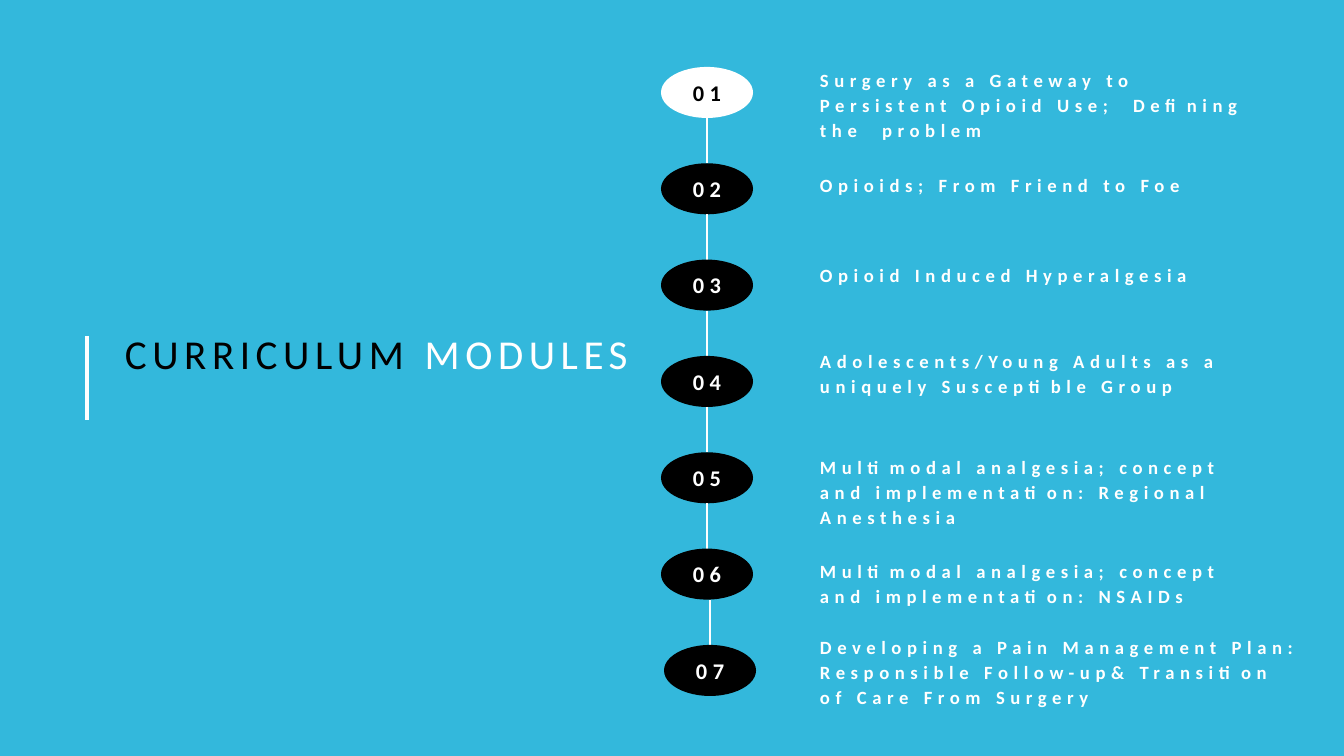
"""Build the curriculum modules slide with a numbered vertical timeline."""
import pptx
import pptx.dml.color
import pptx.enum.shapes
import pptx.enum.text
import pptx.util
from pptx.oxml.ns import qn
from lxml import etree

SLIDE_WIDTH, SLIDE_HEIGHT = 1344, 756
WHITE, BLACK, BLUE = "FFFFFF", "000000", "33B8DC"
TITLE = [("CURRICULUM ", BLACK), ("MODULES", WHITE)]
# label, top, width, height, badge shift, badge colour, number colour
MODULES = [
    ("Surgery as a Gateway to Persistent Opioid Use;  Defining the  problem", 67, 438, 73, 0, WHITE, BLACK),
    ("Opioids; From Friend to Foe", 172, 438, 23, 0, BLACK, WHITE),
    ("Opioid Induced Hyperalgesia", 262, 438, 23, 0, BLACK, WHITE),
    ("Adolescents/Young Adults as a uniquely Susceptible Group", 348, 462, 48, 0, BLACK, WHITE),
    ("Multimodal analgesia; concept and implementation: Regional Anesthesia", 454, 438, 98, 0, BLACK, WHITE),
    ("Multimodal analgesia; concept and implementation: NSAIDs", 558, 438, 73, 0, BLACK, WHITE),
    ("Developing a Pain Management Plan: Responsible Follow-up& Transition of Care From Surgery",
     634, 488, 73, 3, BLACK, WHITE),
]
LABEL_LEFT = 820
BADGE_LEFT, BADGE_WIDTH, BADGE_HEIGHT = 661, 92, 51
FIRST_TOP, LAST_TOP = 67, 645
NUMBER_INSET_X, NUMBER_INSET_Y, NUMBER_HEIGHT = 3, 12, 27


def px(length):
    return pptx.util.Emu(round(length * 9144000 / SLIDE_WIDTH))


def rgb(value):
    return pptx.dml.color.RGBColor.from_string(value)


def add_text(slide, box, pieces, size, bold=False, centred=False, spacing=None):
    frame = slide.shapes.add_textbox(*map(px, box)).text_frame
    frame.word_wrap = True
    frame.margin_left = frame.margin_top = frame.margin_right = frame.margin_bottom = 0
    paragraph = frame.paragraphs[0]
    paragraph.line_spacing = spacing
    if centred:
        paragraph.alignment = pptx.enum.text.PP_ALIGN.CENTER
    for text, colour in pieces:
        run = paragraph.add_run()
        run.text = text
        run.font.name = "Calibri"
        run.font.size = pptx.util.Pt(size)
        run.font.bold = bold
        run.font.color.rgb = rgb(colour)
        run._r.get_or_add_rPr().set("spc", "300")


def add_line(slide, x, top, bottom, width):
    connector = slide.shapes.add_connector(
        pptx.enum.shapes.MSO_CONNECTOR.STRAIGHT, px(x), px(top), px(x), px(bottom))
    connector.line.color.rgb = rgb(WHITE)
    connector.line.width = pptx.util.Pt(width)
    etree.SubElement(connector._element.spPr, qn("a:effectLst"))


def add_badge(slide, left, top, number, fill, colour):
    badge = slide.shapes.add_shape(
        pptx.enum.shapes.MSO_SHAPE.OVAL, px(left), px(top), px(BADGE_WIDTH), px(BADGE_HEIGHT))
    badge.shadow.inherit = False
    badge.fill.solid()
    badge.fill.fore_color.rgb = rgb(fill)
    badge.line.fill.background()
    box = (left + NUMBER_INSET_X, top + NUMBER_INSET_Y, BADGE_WIDTH - 2 * NUMBER_INSET_X, NUMBER_HEIGHT)
    add_text(slide, box, [(f"{number:02d}", colour)], 12, bold=True, centred=True)


def main():
    presentation = pptx.Presentation()
    presentation.slide_width, presentation.slide_height = px(SLIDE_WIDTH), px(SLIDE_HEIGHT)
    slide = presentation.slides.add_slide(presentation.slide_layouts[6])
    slide.background.fill.solid()
    slide.background.fill.fore_color.rgb = rgb(BLUE)

    add_line(slide, 87, 336, 420, 2.25)
    add_text(slide, (125, 328, 532, 99), TITLE, 22)

    pitch = (LAST_TOP - FIRST_TOP) / (len(MODULES) - 1)
    for index, (label, label_top, width, height, shift, fill, colour) in enumerate(MODULES):
        left, top = BADGE_LEFT + shift, FIRST_TOP + index * pitch
        if index:
            add_line(slide, left + BADGE_WIDTH / 2, top - pitch + BADGE_HEIGHT, top, 1)
        add_badge(slide, left, top, index + 1, fill, colour)
        add_text(slide, (LABEL_LEFT, label_top, width, height), [(label, WHITE)], 10, bold=True, spacing=1.1)

    presentation.save("out.pptx")


if __name__ == "__main__":
    main()
